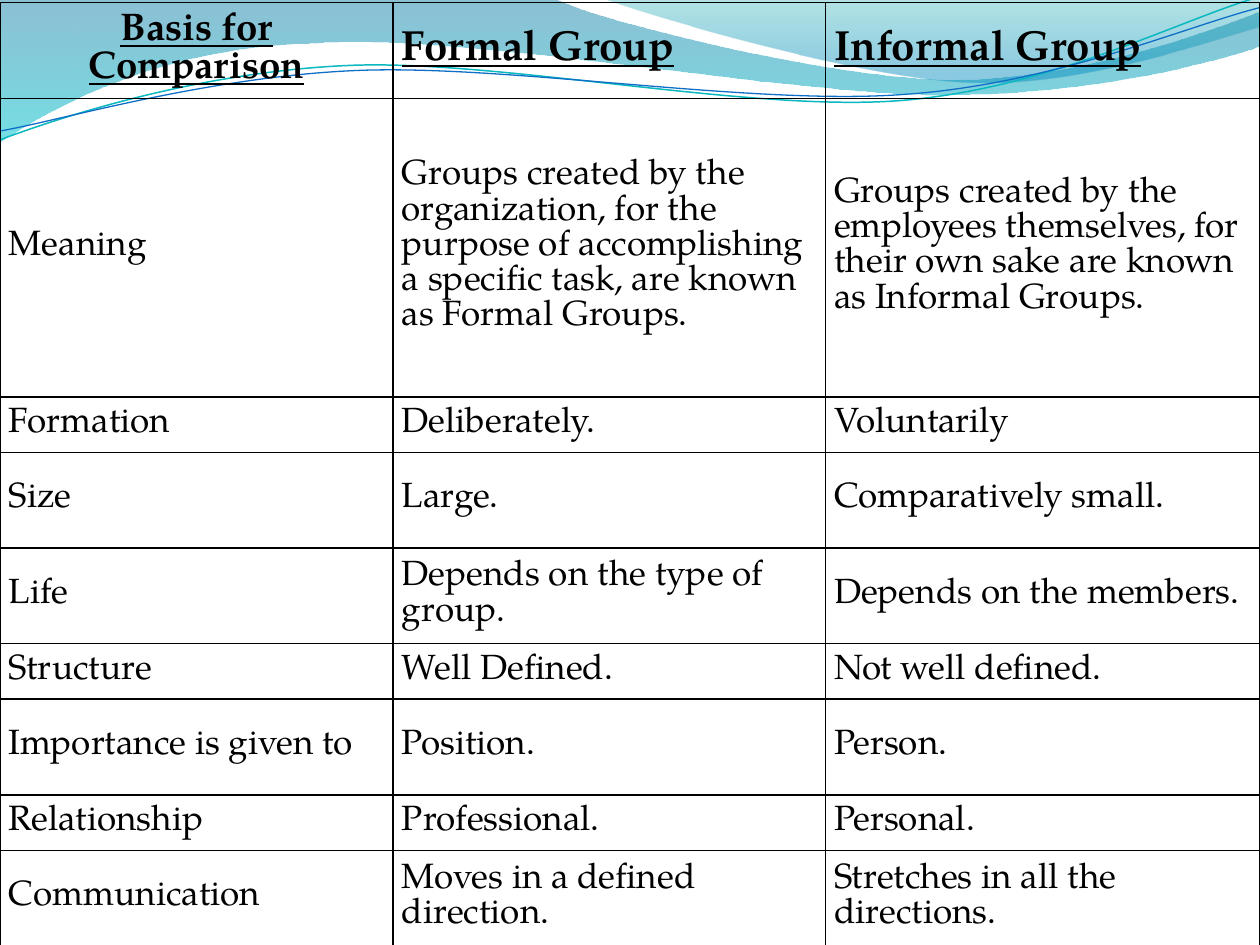
from itertools import chain

from lxml.etree import SubElement
from pptx import Presentation
from pptx.dml.color import RGBColor
from pptx.enum.text import MSO_ANCHOR as Anchor, PP_ALIGN as Align
from pptx.oxml import parse_xml
from pptx.oxml.ns import nsdecls, qn
from pptx.util import Inches, Pt

FONT = "TeX Gyre Pagella"
UNITS_PER_INCH = 100
COLUMN_WIDTHS = (3.12, 3.43, 3.45)
TALL, SHORT, MEANING = 0.76, 0.44, 2.37
ROW_HEIGHTS = (TALL, MEANING, SHORT, TALL, TALL, SHORT, TALL, SHORT, TALL)

HEADINGS = ("Basis for Comparison", "Formal Group", "Informal Group")
COMPARISONS = (
    ("Meaning",
     "Groups created by the organization, for the purpose of accomplishing "
     "a specific task, are known as Formal Groups.",
     "Groups created by the employees themselves, for their own sake are known "
     "as Informal Groups."),
    ("Formation", "Deliberately.", "Voluntarily"),
    ("Size", "Large.", "Comparatively small."),
    ("Life", "Depends on the type of group.", "Depends on the members."),
    ("Structure", "Well Defined.", "Not well defined."),
    ("Importance is given to", "Position.", "Person."),
    ("Relationship", "Professional.", "Personal."),
    ("Communication", "Moves in a defined direction.", "Stretches in all the directions."),
)

WIDE_WAVE = (
    (0, 0), [(4.4, -0.01)],
    [(4.76, 0.17), (6.64, 0.63), (7.58, 0.63)],
    [(8.53, 0.63), (9.58, 0.26), (10, 0.09)],
    [(10.01, 0.36)],
    [(9.83, 0.44), (8.7, 0.76), (7.46, 0.75)],
    [(6.22, 0.75), (3.82, 0.28), (2.57, 0.34)],
    [(1.29, 0.36), (0.46, 0.83), (-0.01, 1.13)],
)
RIGHT_WAVE = (
    (4.79, -0.01),
    [(5.09, 0.11), (6.82, 0.62), (7.69, 0.65)],
    [(8.56, 0.69), (9.61, 0.32), (10, 0.21)],
    [(10, 0)],
)
TEAL_STRAND = (
    (0, 1.11),
    [(0.48, 0.93), (1.58, 0.57), (2.77, 0.52)],
    [(3.95, 0.47), (5.93, 0.89), (7.13, 0.8)],
    [(8.33, 0.71), (9.38, 0.15), (9.98, -0.02)],
)
BLUE_STRAND = (
    (0, 1.04),
    [(0.47, 0.96), (1.64, 0.61), (2.83, 0.56)],
    [(4.03, 0.51), (5.97, 0.84), (7.17, 0.75)],
    [(8.36, 0.67), (9.41, 0.21), (10, 0.06)],
)


def color(hex_code):
    """Turn a hex string into a colour."""
    return RGBColor.from_string(hex_code)


def bend_segments(shape, segments):
    """Merge each run of three drawn lines into one cubic curve."""
    lines = iter(list(shape._element.iter(qn("a:lnTo"))))
    for segment in segments:
        first, *others = [next(lines) for _ in segment]
        if others:
            curve = parse_xml(f'<a:cubicBezTo {nsdecls("a")}/>')
            first.addprevious(curve)
            for line in (first, *others):
                curve.append(line[0])
                line.getparent().remove(line)


def add_outline(slide, outline, close):
    """Draw an outline of straight and curved segments given in inches."""
    start, *segments = outline
    (start_x, start_y), *points = [
        (round(x * UNITS_PER_INCH), round(y * UNITS_PER_INCH))
        for x, y in chain([start], *segments)]
    builder = slide.shapes.build_freeform(start_x, start_y, Inches(1) / UNITS_PER_INCH)
    builder.add_line_segments(points, close=close)
    shape = builder.convert_to_shape()
    bend_segments(shape, segments)
    shape.shadow.inherit = False
    return shape


def add_wave(slide, outline, stops):
    """Add a translucent wave that shades from top to bottom."""
    wave = add_outline(slide, outline, close=True)
    wave.line.fill.background()
    wave.fill.gradient()
    wave.fill.gradient_angle = 270
    for stop, (position, hex_code, _) in zip(wave.fill.gradient_stops, stops):
        stop.position = position
        stop.color.rgb = color(hex_code)
    shades = wave._element.iter(qn("a:srgbClr"))
    for shade, (_, _, opacity) in zip(shades, stops):
        SubElement(shade, qn("a:alpha")).set("val", str(opacity * 1000))


def add_strand(slide, outline, hex_code, width):
    """Add a thin curved line."""
    strand = add_outline(slide, outline, close=False)
    strand.fill.background()
    strand.line.color.rgb = color(hex_code)
    strand.line.width = Pt(width)


def write_text(cell, text, size=20, bold=False, underline=False, align=Align.LEFT):
    """Write formatted text into a cell."""
    paragraph = cell.text_frame.paragraphs[0]
    paragraph.alignment = align
    run = paragraph.add_run()
    run.text = text
    run.font.name = FONT
    run.font.size = Pt(size)
    run.font.bold = bold
    run.font.underline = underline
    run.font.color.rgb = color("000000")


def format_cell(cell):
    """Give a cell its margins, clear fill and thin black borders."""
    cell.vertical_anchor = Anchor.MIDDLE
    cell.margin_left = cell.margin_right = Inches(0.07)
    cell.margin_top = cell.margin_bottom = Inches(0.03)
    cell.fill.background()
    properties = cell._tc.get_or_add_tcPr()
    for index, side in enumerate("LRTB"):
        properties.insert(index, parse_xml(
            f'<a:ln{side} {nsdecls("a")} w="{Pt(1)}"><a:solidFill>'
            f'<a:srgbClr val="000000"/></a:solidFill></a:ln{side}>'))


def add_comparison(slide):
    """Add the table that compares formal and informal groups."""
    table = slide.shapes.add_table(
        len(ROW_HEIGHTS), len(COLUMN_WIDTHS),
        Inches(0), Inches(0.02), Inches(10), Inches(sum(ROW_HEIGHTS))).table
    table.first_row = table.horz_banding = False
    for column, width in zip(table.columns, COLUMN_WIDTHS):
        column.width = Inches(width)
    for row, height in zip(table.rows, ROW_HEIGHTS):
        row.height = Inches(height)
    for cell in table.iter_cells():
        format_cell(cell)
    basis, *groups = zip(table.rows[0].cells, HEADINGS)
    write_text(*basis, size=22, bold=True, underline=True, align=Align.CENTER)
    for cell, heading in groups:
        write_text(cell, heading, size=24, bold=True, underline=True)
    for row_index, comparison in enumerate(COMPARISONS, start=1):
        for cell, text in zip(table.rows[row_index].cells, comparison):
            write_text(cell, text)


def main():
    """Build the slide and save it."""
    presentation = Presentation()
    presentation.slide_width = Inches(10)
    presentation.slide_height = Inches(7.5)
    slide = presentation.slides.add_slide(presentation.slide_layouts[6])
    add_wave(slide, WIDE_WAVE, ((0, "0074A1", 45), (1, "00C6CF", 55)))
    add_wave(slide, RIGHT_WAVE, ((0, "00A1A9", 30), (0.8, "008BBF", 45)))
    add_strand(slide, TEAL_STRAND, "0AB8BF", 0.85)
    add_strand(slide, BLUE_STRAND, "0F6FC6", 0.75)
    add_comparison(slide)
    presentation.save("out.pptx")


if __name__ == "__main__":
    main()
